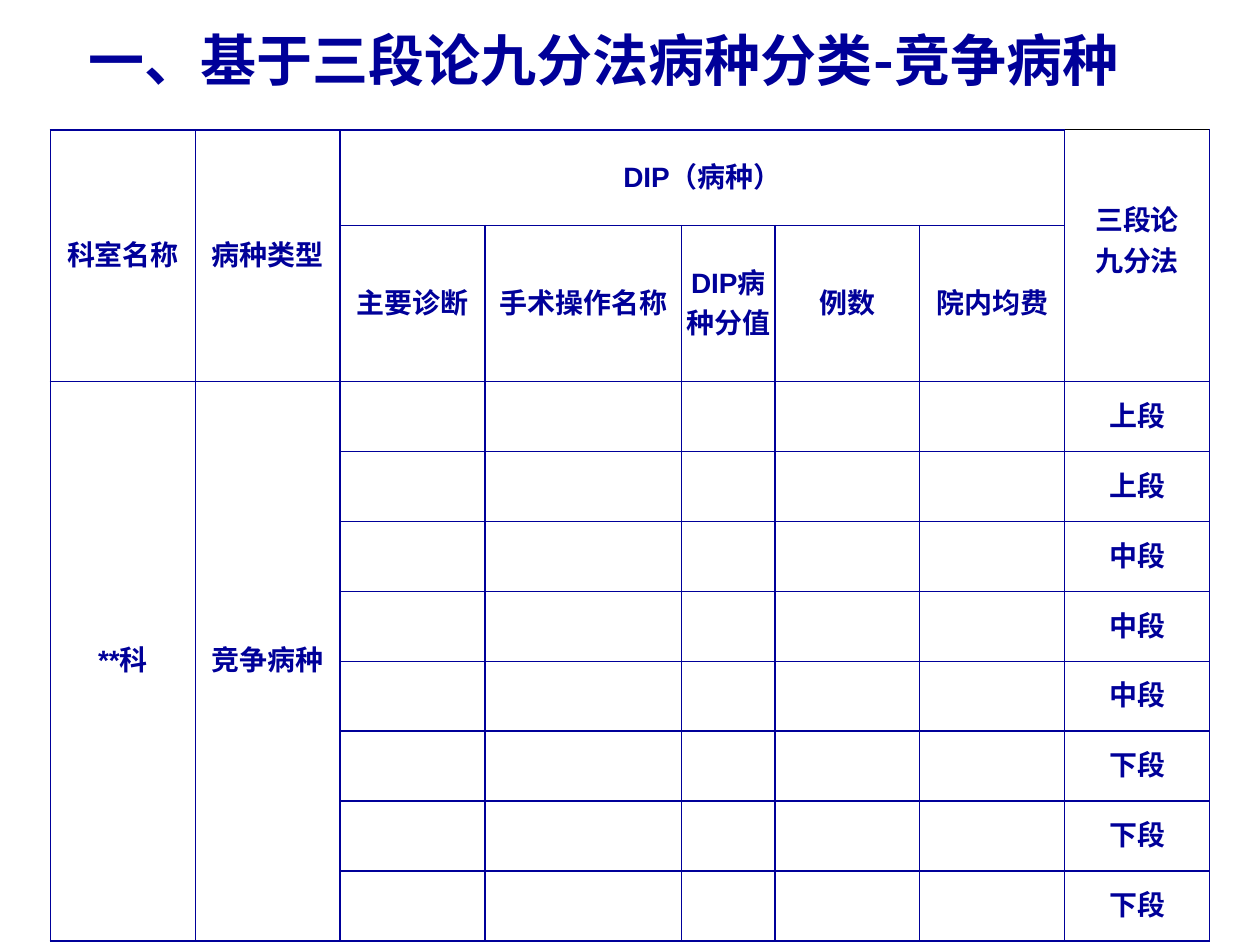
from dataclasses import dataclass

from lxml import etree
from pptx import Presentation
from pptx.dml.color import RGBColor
from pptx.enum.text import MSO_ANCHOR, PP_ALIGN
from pptx.oxml.ns import qn
from pptx.table import Table, _Cell
from pptx.text.text import TextFrame
from pptx.util import Inches, Pt

NAVY = RGBColor(0x00, 0x00, 0x99)
BLACK = RGBColor(0x00, 0x00, 0x00)
CENTER = PP_ALIGN.CENTER
MIDDLE = MSO_ANCHOR.MIDDLE
CJK_FONT = "Noto Sans CJK SC"
LATIN_FONT = "Arial"

COLUMN_WIDTHS = [1.15] * 3 + [1.56, 0.74] + [1.15] * 3
HEADER_HEIGHTS = [0.76, 1.24]
STAGES = ["上段"] * 2 + ["中段"] * 3 + ["下段"] * 3
STAGE_HEIGHT = 0.555
ROW_HEIGHTS = HEADER_HEIGHTS + [STAGE_HEIGHT] * len(STAGES)
FIRST_STAGE_ROW = len(HEADER_HEIGHTS)
STAGE_COLUMN = len(COLUMN_WIDTHS) - 1
DIAGNOSIS_COLUMN = 2
DETAILS = ["主要诊断", "手术操作名称", "DIP病种分值", "例数", "院内均费"]


@dataclass(frozen=True)
class Entry:
    row: int
    column: int
    text: str
    row_span: int = 1
    column_span: int = 1
    bottom: float = 0.05


ENTRIES = [
    Entry(0, 0, "科室名称", row_span=FIRST_STAGE_ROW),
    Entry(0, 1, "病种类型", row_span=FIRST_STAGE_ROW),
    Entry(0, DIAGNOSIS_COLUMN, "DIP（病种）", column_span=len(DETAILS)),
    Entry(0, STAGE_COLUMN, "三段论\n九分法", row_span=FIRST_STAGE_ROW, bottom=0.28),
    Entry(FIRST_STAGE_ROW, 0, "**科", row_span=len(STAGES)),
    Entry(FIRST_STAGE_ROW, 1, "竞争病种", row_span=len(STAGES)),
    *(Entry(1, DIAGNOSIS_COLUMN + i, detail) for i, detail in enumerate(DETAILS)),
    *(Entry(FIRST_STAGE_ROW + i, STAGE_COLUMN, stage) for i, stage in enumerate(STAGES)),
]


def write_text(frame: TextFrame, text: str, font_name: str, size: float) -> None:
    frame.text = text
    font_format = {"name": font_name, "size": Pt(size), "bold": True}
    for paragraph in frame.paragraphs:
        paragraph.alignment = CENTER
        for run in paragraph.runs:
            for attribute, value in font_format.items():
                setattr(run.font, attribute, value)
            run.font.color.rgb = NAVY
            east_asian = etree.SubElement(run.font._element, qn("a:ea"))
            east_asian.set("typeface", CJK_FONT)


def draw_border(cell: _Cell, side: str, color: RGBColor, width: float) -> None:
    properties = cell._tc.get_or_add_tcPr()
    line = etree.SubElement(properties, qn(f"a:ln{side}"), w=str(Pt(width)))
    fill = etree.SubElement(line, qn("a:solidFill"))
    etree.SubElement(fill, qn("a:srgbClr"), val=str(color))


def style_cell(cell: _Cell, black_top: bool) -> None:
    for side in "LRTB":
        if side == "T" and black_top:
            draw_border(cell, side, BLACK, 0.5)
        else:
            draw_border(cell, side, NAVY, 1)
    cell.fill.background()


def fill_entry(table: Table, entry: Entry) -> None:
    cell = table.cell(entry.row, entry.column)
    if entry.row_span > 1 or entry.column_span > 1:
        last_row = entry.row + entry.row_span - 1
        last_column = entry.column + entry.column_span - 1
        cell.merge(table.cell(last_row, last_column))
    cell_format = {
        "vertical_anchor": MIDDLE,
        "margin_left": Inches(0.01),
        "margin_right": Inches(0.01),
        "margin_top": Inches(0.01),
        "margin_bottom": Inches(entry.bottom),
    }
    for attribute, value in cell_format.items():
        setattr(cell, attribute, value)
    write_text(cell.text_frame, entry.text, LATIN_FONT, 16)


def add_title(slide) -> None:
    title = slide.shapes.add_textbox(
        Inches(-0.6), Inches(-0.05), Inches(10.78), Inches(1.09)
    )
    frame = title.text_frame
    frame.word_wrap = True
    frame.vertical_anchor = MIDDLE
    write_text(frame, "一、基于三段论九分法病种分类-竞争病种", CJK_FONT, 32)
    frame.paragraphs[0].line_spacing = Pt(35)


def add_disease_table(slide) -> None:
    table = slide.shapes.add_table(
        len(ROW_HEIGHTS), len(COLUMN_WIDTHS), Inches(0.4), Inches(1.03),
        Inches(sum(COLUMN_WIDTHS)), Inches(sum(ROW_HEIGHTS)),
    ).table
    table.first_row = False
    table.horz_banding = False
    for column, width in zip(table.columns, COLUMN_WIDTHS):
        column.width = Inches(width)
    for row, height in zip(table.rows, ROW_HEIGHTS):
        row.height = Inches(height)
    for row in range(len(ROW_HEIGHTS)):
        for column in range(len(COLUMN_WIDTHS)):
            black_top = row == 0 and column == STAGE_COLUMN
            style_cell(table.cell(row, column), black_top)
    for entry in ENTRIES:
        fill_entry(table, entry)


def main() -> None:
    presentation = Presentation()
    presentation.slide_width = Inches(10)
    presentation.slide_height = Inches(7.5)
    slide = presentation.slides.add_slide(presentation.slide_layouts[6])
    add_title(slide)
    add_disease_table(slide)
    presentation.save("out.pptx")


if __name__ == "__main__":
    main()
